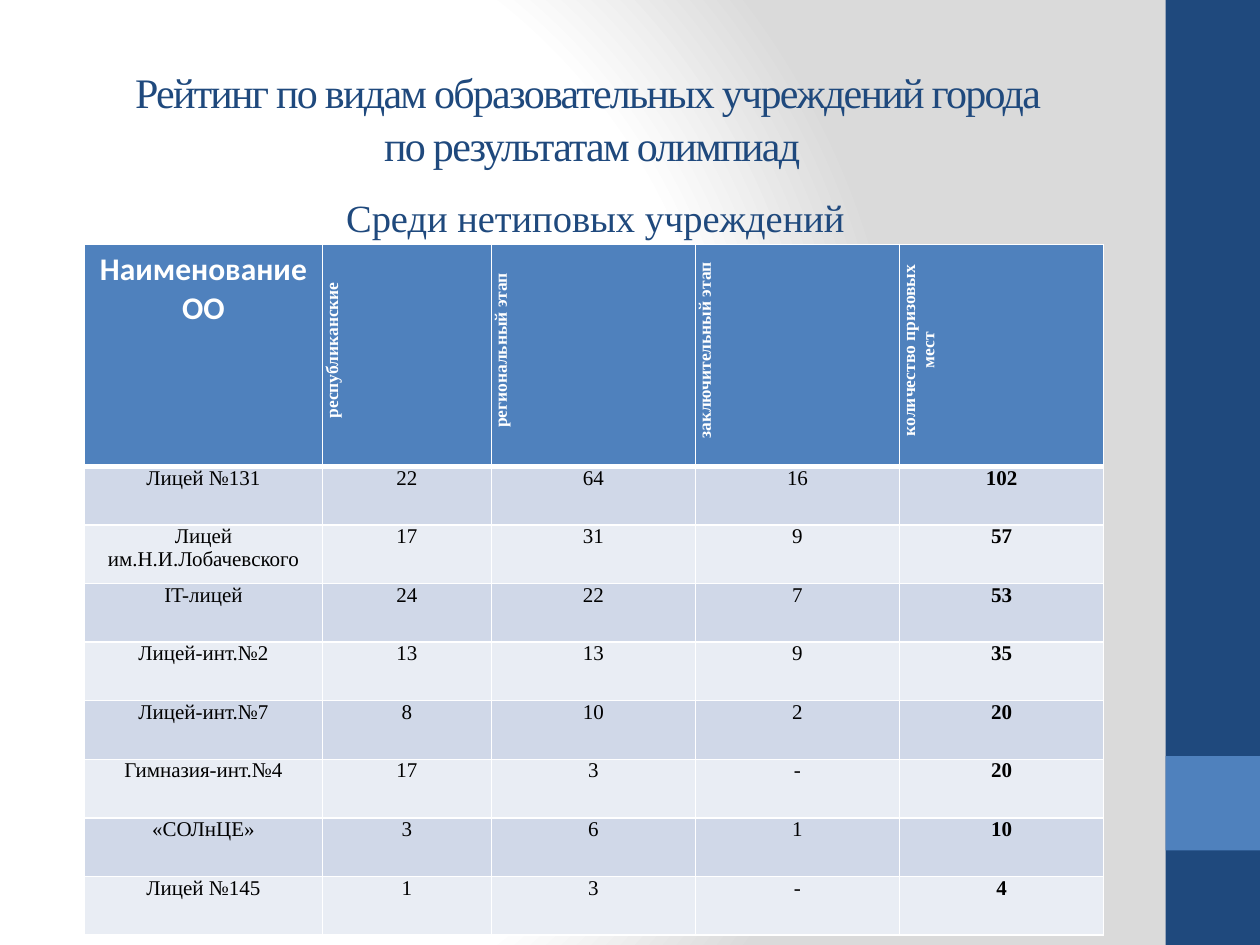
from pptx import Presentation
from pptx.dml.color import RGBColor
from pptx.enum.shapes import MSO_SHAPE as Shape
from pptx.enum.text import MSO_ANCHOR as Anchor, PP_ALIGN as Align
from pptx.oxml import parse_xml
from pptx.oxml.ns import nsdecls
from pptx.util import Inches, Pt

NAVY, BLUE, WHITE, BLACK = "1F497D", "4F81BD", "FFFFFF", "000000"
BANDS = ["D0D8E8", "E9EDF4"]
SERIF = "Times New Roman"


def color(value):
    return RGBColor.from_string(value)


def write(frame, text, size, fill, font=SERIF, bold=False, indent=0,
          line_spacing=None, tracking=None):
    """Fill a text frame with one centred paragraph; a newline breaks the line."""
    frame.word_wrap = True
    para = frame.paragraphs[0]
    para.text = text.replace("\n", "\v")
    para.alignment = Align.CENTER
    para.line_spacing = line_spacing
    if indent:
        para._p.get_or_add_pPr().set("marL", str(Inches(indent)))
    for span in para.runs:
        span.font.name = font
        span.font.size = Pt(size)
        span.font.bold = bold
        span.font.color.rgb = color(fill)
        if tracking:
            span.font._element.set("spc", str(tracking * 100))


deck = Presentation()
deck.slide_width, deck.slide_height = Inches(10), Inches(7.5)
page = deck.slides.add_slide(deck.slide_layouts[6])

# Background: white glow fading to grey on the right
page.background.fill.gradient()
gradient = page.element.xpath(".//a:gradFill")[0]
stops = "".join(
    f'<a:gs pos="{position * 1000}"><a:srgbClr val="{value}"/></a:gs>'
    for position, value in [(0, WHITE), (75, WHITE), (100, "DADADA")])
gradient.getparent().replace(gradient, parse_xml(
    f'<a:gradFill {nsdecls("a")} rotWithShape="1"><a:gsLst>{stops}</a:gsLst>'
    '<a:path path="circle"><a:fillToRect l="20000" t="50000" r="100000" b="50000"/>'
    '</a:path></a:gradFill>'))

# Side stripe with its accent square
for top, height, fill in [(0, 7.5, NAVY), (6, 0.75, BLUE)]:
    stripe = page.shapes.add_shape(
        Shape.RECTANGLE, Inches(9.25), Inches(top), Inches(0.75), Inches(height))
    stripe.shadow.inherit = False
    stripe.fill.solid()
    stripe.fill.fore_color.rgb = color(fill)
    stripe.line.fill.background()

# Headings
title = page.shapes.add_textbox(Inches(0.5), Inches(0.3), Inches(8.33), Inches(1.25))
title.text_frame.vertical_anchor = Anchor.MIDDLE
write(title.text_frame,
      "Рейтинг по видам образовательных учреждений города\n по результатам олимпиад",
      24, NAVY, line_spacing=1.05, tracking=-1)
subtitle = page.shapes.add_textbox(Inches(0.5), Inches(1.47), Inches(8.33), Inches(5.53))
write(subtitle.text_frame, "Среди нетиповых учреждений", 22, NAVY,
      indent=0.12, line_spacing=1.05)

# Rating table
rows = [
    ["Наименование ОО", "республиканские", "региональный этап",
     "заключительный этап", "количество призовых мест"],
    ["Лицей №131", "22", "64", "16", "102"],
    ["Лицей им.Н.И.Лобачевского", "17", "31", "9", "57"],
    ["IT-лицей", "24", "22", "7", "53"],
    ["Лицей-инт.№2", "13", "13", "9", "35"],
    ["Лицей-инт.№7", "8", "10", "2", "20"],
    ["Гимназия-инт.№4", "17", "3", "-", "20"],
    ["«СОЛнЦЕ»", "3", "6", "1", "10"],
    ["Лицей №145", "1", "3", "-", "4"],
]
widths = [1.89, 1.34, 1.62, 1.62, 1.62]
header_height, table_height = 1.5, 5.22
row_height = (table_height - header_height) / (len(rows) - 1)
table = page.shapes.add_table(
    len(rows), len(widths), Inches(0.67), Inches(1.94),
    Inches(sum(widths)), Inches(table_height)).table
table.first_row = table.horz_banding = False
for column, width in zip(table.columns, widths):
    column.width = Inches(width)

for r, values in enumerate(rows):
    table.rows[r].height = Inches(row_height if r else header_height)
    for c, value in enumerate(values):
        cell = table.cell(r, c)
        props = cell._tc.get_or_add_tcPr()
        for side in "LRTB":
            thick = (r, side) in [(0, "B"), (1, "T")]
            props.append(parse_xml(
                f'<a:ln{side} {nsdecls("a")} w="{Pt(3 if thick else 1)}"><a:solidFill>'
                f'<a:srgbClr val="{WHITE}"/></a:solidFill></a:ln{side}>'))
        cell.fill.solid()
        cell.fill.fore_color.rgb = color(BANDS[(r - 1) % 2] if r else BLUE)
        if r or c:
            cell.margin_left = cell.margin_right = Inches(0.07)
            cell.margin_top = cell.margin_bottom = 0
        if r:
            write(cell.text_frame, value, 12, BLACK, bold=c == len(widths) - 1)
        elif c:
            props.set("vert", "vert270")
            write(cell.text_frame, value, 10, WHITE, bold=True, indent=0.08)
        else:
            write(cell.text_frame, value, 18, WHITE, font="Calibri", bold=True)

deck.save("out.pptx")
